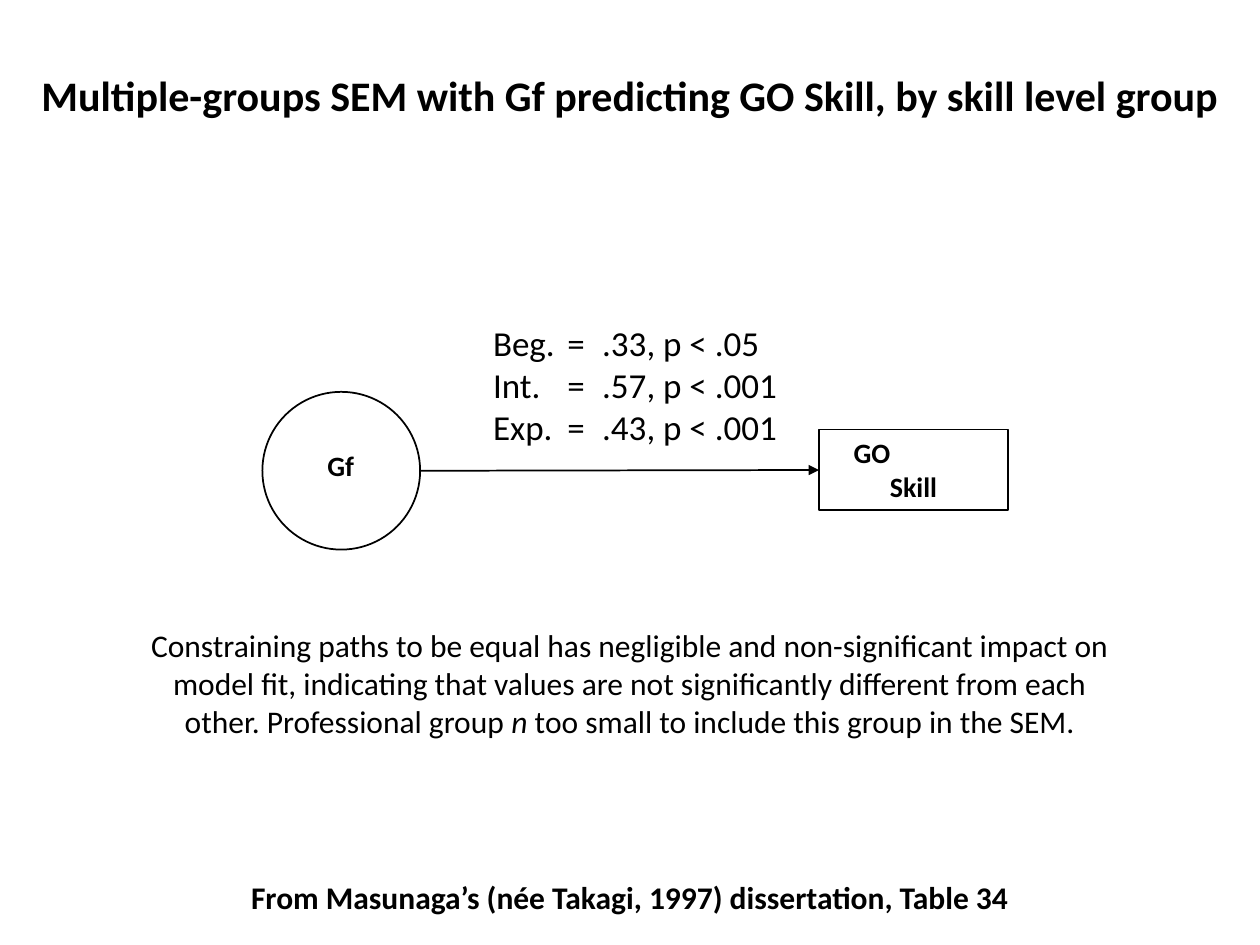
from lxml import etree
from pptx import Presentation
from pptx.dml.color import RGBColor
from pptx.enum.shapes import MSO_CONNECTOR, MSO_SHAPE
from pptx.enum.text import MSO_ANCHOR, MSO_AUTO_SIZE, PP_ALIGN
from pptx.oxml.ns import qn
from pptx.util import Cm, Pt

LEFT, CENTER = PP_ALIGN.LEFT, PP_ALIGN.CENTER
TOP = MSO_ANCHOR.TOP
NO_AUTOFIT = MSO_AUTO_SIZE.NONE
ELLIPSE, RECTANGLE = MSO_SHAPE.OVAL, MSO_SHAPE.RECTANGLE
STRAIGHT = MSO_CONNECTOR.STRAIGHT

FONT = "Calibri"
BLACK = "000000"
LEFT_SIDE = 1
TITLE_ONLY = 5

PATHS = [("Beg.", ".33, p < .05"), ("Int.", ".57, p < .001"), ("Exp.", ".43, p < .001")]
NOTE = [
    "Constraining paths to be equal has negligible and non-significant impact on "
    "model fit, indicating that values are not significantly different from each "
    "other. Professional group ",
    "n",
    " too small to include this group in the SEM.",
]


def rgb(color):
    return RGBColor.from_string(color)


def write_text(shape, paragraphs, size=18, bold=False, align=CENTER, italic=None):
    """Fill a shape with paragraphs, each a list of runs; the run equal to italic is slanted."""
    frame = shape.text_frame
    frame.word_wrap = True
    frame.auto_size = NO_AUTOFIT
    frame.vertical_anchor = TOP
    for index, runs in enumerate(paragraphs):
        paragraph = frame.paragraphs[0] if index == 0 else frame.add_paragraph()
        paragraph.alignment = align
        for text in runs:
            run = paragraph.add_run()
            run.text = text
            run.font.name = FONT
            run.font.size = Pt(size)
            run.font.bold = bold
            run.font.italic = text == italic
            run.font.color.rgb = rgb(BLACK)
    return frame


def add_text(slide, box, paragraphs, **text_format):
    return write_text(slide.shapes.add_textbox(*map(Cm, box)), paragraphs, **text_format)


def set_title(slide, box, text, **text_format):
    title = slide.shapes.title
    title.left, title.top, title.width, title.height = map(Cm, box)
    write_text(title, [[text]], **text_format)


def add_outline(slide, kind, box):
    outline = slide.shapes.add_shape(kind, *map(Cm, box))
    outline.shadow.inherit = False
    outline.fill.background()
    outline.line.color.rgb = rgb(BLACK)
    outline.line.width = Pt(1)
    return outline


def add_arrow(slide, start, target):
    """Draw an arrow from a point to the left side of the target rectangle."""
    x, y = map(Cm, start)
    arrow = slide.shapes.add_connector(STRAIGHT, x, y, target.left, y)
    arrow.end_connect(target, LEFT_SIDE)
    arrow.line.color.rgb = rgb(BLACK)
    arrow.line.width = Pt(1)
    etree.SubElement(arrow.line._get_or_add_ln(), qn("a:tailEnd"), type="triangle")
    etree.SubElement(arrow._element.spPr, qn("a:effectLst"))


def add_tab_stops(paragraph, positions):
    tabs = etree.SubElement(paragraph._p.get_or_add_pPr(), qn("a:tabLst"))
    for position in positions:
        etree.SubElement(tabs, qn("a:tab"), pos=str(Cm(position)), algn="l")


def add_path_values(slide, box):
    rows = [[f"{group}\t=\t{value}"] for group, value in PATHS]
    frame = add_text(slide, box, rows, size=20, align=LEFT)
    frame.margin_left = Cm(1.25)
    for paragraph in frame.paragraphs:
        add_tab_stops(paragraph, (1.5, 2.2))


def add_skill_box(slide, box):
    skill = add_outline(slide, RECTANGLE, box)
    frame = write_text(skill, [["GO"], ["Skill"]], size=16, bold=True)
    first = frame.paragraphs[0]
    first.alignment = LEFT
    first._p.get_or_add_pPr().set("marL", str(Cm(0.45)))
    return skill


def main():
    deck = Presentation()
    deck.slide_width, deck.slide_height = Cm(25.4), Cm(19.05)
    slide = deck.slides.add_slide(deck.slide_layouts[TITLE_ONLY])

    set_title(slide, (0, 1.27, 25.4, 1.28),
              "Multiple-groups SEM with Gf predicting GO Skill, by skill level group",
              size=24, bold=True)
    add_outline(slide, ELLIPSE, (5.29, 7.9, 3.18, 3.18))
    add_text(slide, (5.92, 8.92, 1.9, 0.94), [["Gf"]], size=16, bold=True)
    skill = add_skill_box(slide, (16.51, 8.66, 3.81, 1.63))
    add_arrow(slide, (8.47, 9.49), skill)
    add_path_values(slide, (8.69, 6.35, 7.62, 2.82))
    add_text(slide, (2.54, 12.5, 20.32, 2.57), [NOTE], italic="n")
    add_text(slide, (0, 17.58, 25.4, 1.02),
             [["From Masunaga’s (née Takagi, 1997) dissertation, Table 34"]], bold=True)

    deck.save("out.pptx")


if __name__ == "__main__":
    main()
